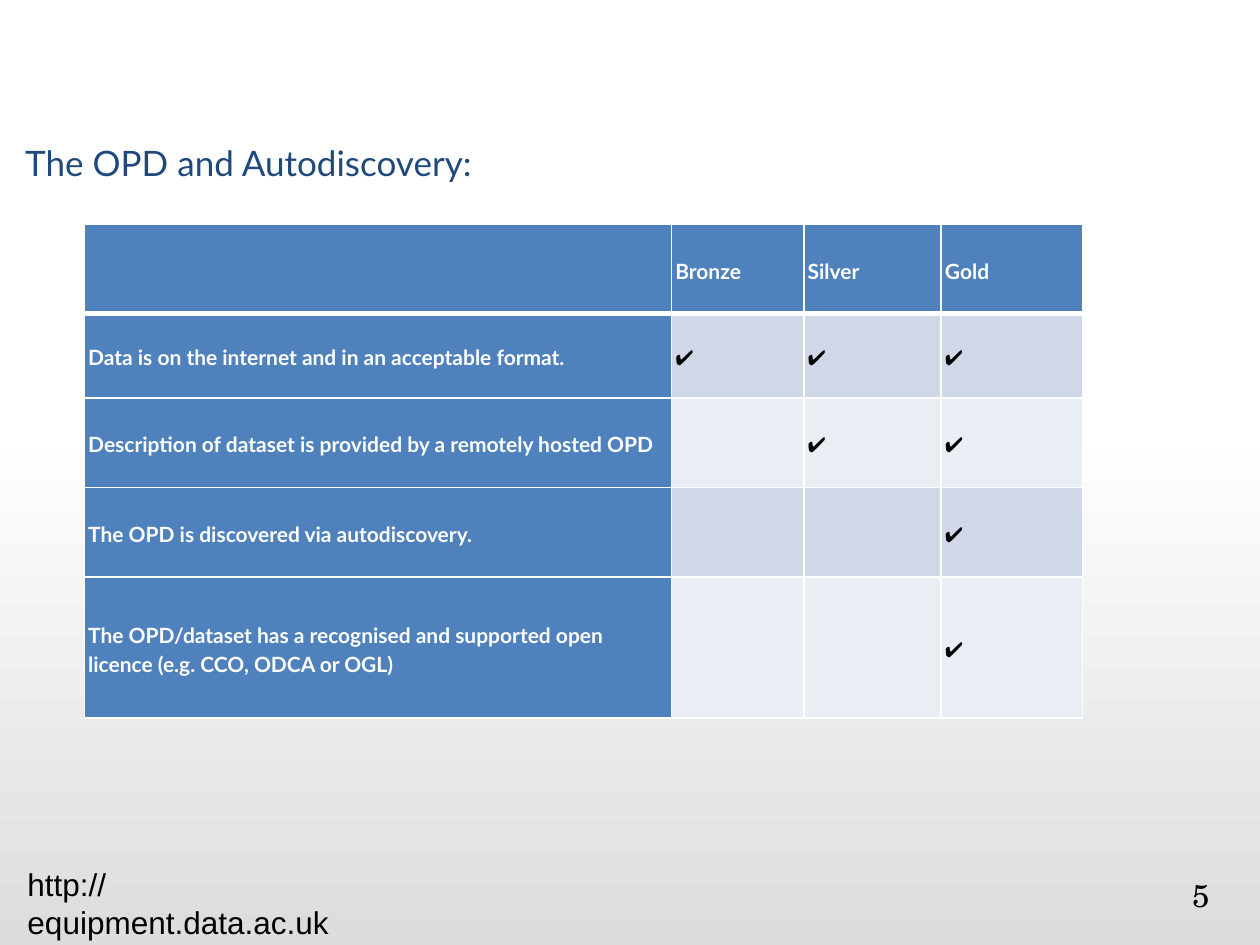
from dataclasses import dataclass

from lxml.etree import SubElement
from pptx import Presentation
from pptx.dml.color import RGBColor
from pptx.enum.shapes import MSO_SHAPE
from pptx.enum.text import MSO_ANCHOR, PP_ALIGN
from pptx.oxml.ns import qn
from pptx.util import Inches, Pt


@dataclass(frozen=True)
class Theme:
    """Colours, fonts and type sizes of the slide."""
    white: str = "FFFFFF"
    black: str = "000000"
    title: str = "1F497D"
    header: str = "4F81BD"
    bands: tuple = ("D0D8E8", "E9EDF4")
    fade: str = "DCDEDE"
    body_font: str = "Lato"
    link_font: str = "Arial"
    number_font: str = "TeX Gyre Schola"
    title_size: int = 20
    footer_size: int = 18
    table_size: int = 12


THEME = Theme()
LEVELS = ("Bronze", "Silver", "Gold")
CRITERIA = (
    ("Data is on the internet and in an acceptable format.", "Bronze"),
    ("Description of dataset is provided by a remotely hosted OPD", "Silver"),
    ("The OPD is discovered via autodiscovery.", "Gold"),
    ("The OPD/dataset has a recognised and supported open licence (e.g. CCO, ODCA or OGL)", "Gold"),
)
COLUMN_WIDTHS = (4.66, 1.05, 1.09, 1.12)
ROW_HEIGHTS = (0.71, 0.67, 0.71, 0.71, 1.12)


def style_paragraph(para, font_name, size, color, bold=False):
    """Format every run of a paragraph."""
    for span in para.runs:
        span.font.name = font_name
        span.font.size = Pt(size)
        span.font.bold = bold
        span.font.color.rgb = RGBColor.from_string(color)


def add_background_fade(page):
    """Draw the gradient that darkens the lower part of the page."""
    fade = page.shapes.add_shape(
        MSO_SHAPE.RECTANGLE, Inches(-0.09), Inches(3.33), Inches(10.09), Inches(4.17))
    fade.shadow.inherit = False
    fade.line.fill.background()
    fade.fill.gradient()
    fade.fill.gradient_angle = 270
    for stop, color in zip(fade.fill.gradient_stops, (THEME.white, THEME.fade)):
        stop.color.rgb = RGBColor.from_string(color)


def add_text(page, text, place, font_name, size, color,
             align=PP_ALIGN.LEFT, left_inset=0.1, right_inset=0.1):
    """Add a wrapping text box with one paragraph."""
    box = page.shapes.add_textbox(*(Inches(length) for length in place))
    frame = box.text_frame
    frame.text = text
    frame.word_wrap = True
    frame.margin_left, frame.margin_right = Inches(left_inset), Inches(right_inset)
    para = frame.paragraphs[0]
    para.alignment = align
    style_paragraph(para, font_name, size, color)


def set_borders(cell, bottom_width):
    """Give a cell white borders with a chosen bottom width."""
    properties = cell._tc.get_or_add_tcPr()
    for side, width in (("L", 1), ("R", 1), ("T", 1), ("B", bottom_width)):
        line = SubElement(properties, qn(f"a:ln{side}"), w=str(Pt(width)))
        fill = SubElement(line, qn("a:solidFill"))
        SubElement(fill, qn("a:srgbClr"), val=THEME.white)


def fill_cell(cell, text, fill, color, bold, bottom_width):
    """Set the text, fill and borders of a cell."""
    set_borders(cell, bottom_width)
    cell.fill.solid()
    cell.fill.fore_color.rgb = RGBColor.from_string(fill)
    cell.vertical_anchor = MSO_ANCHOR.MIDDLE
    cell.margin_left = cell.margin_right = Inches(0.03)
    if text:
        cell.text_frame.text = text
        para = cell.text_frame.paragraphs[0]
        para.line_spacing = 1.15
        style_paragraph(para, THEME.body_font, THEME.table_size, color, bold)


def add_levels_table(page):
    """Add the table of criteria against award levels."""
    rows = [("", *LEVELS)]
    for criterion, first_level in CRITERIA:
        start = LEVELS.index(first_level)
        rows.append((criterion, *("✔" if i >= start else "" for i in range(len(LEVELS)))))
    table = page.shapes.add_table(
        len(rows), len(COLUMN_WIDTHS), Inches(0.67), Inches(1.78),
        Inches(sum(COLUMN_WIDTHS)), Inches(sum(ROW_HEIGHTS))).table
    table.first_row = table.horz_banding = False
    for column, width in zip(table.columns, COLUMN_WIDTHS):
        column.width = Inches(width)
    for row, height in zip(table.rows, ROW_HEIGHTS):
        row.height = Inches(height)
    for r, texts in enumerate(rows):
        for c, text in enumerate(texts):
            heading = r == 0 or c == 0
            fill = THEME.header if heading else THEME.bands[(r - 1) % 2]
            color = THEME.white if heading else THEME.black
            fill_cell(table.cell(r, c), text, fill, color, heading, 3 if r == 0 else 1)


def main():
    """Build the slide and save the deck."""
    deck = Presentation()
    deck.slide_width, deck.slide_height = Inches(10), Inches(7.5)
    page = deck.slides.add_slide(deck.slide_layouts[6])
    add_background_fade(page)
    add_text(page, "The OPD and Autodiscovery:", (0.2, 1.07, 9.29, 0.63),
             THEME.body_font, THEME.title_size, THEME.title, left_inset=0)
    add_text(page, "5", (7.52, 6.9, 2.08, 0.5), THEME.number_font,
             THEME.footer_size, THEME.black, PP_ALIGN.RIGHT, right_inset=0)
    add_levels_table(page)
    add_text(page, "http://equipment.data.ac.uk", (0.12, 6.82, 3.17, 0.5),
             THEME.link_font, THEME.footer_size, THEME.black)
    deck.save("out.pptx")


if __name__ == "__main__":
    main()
